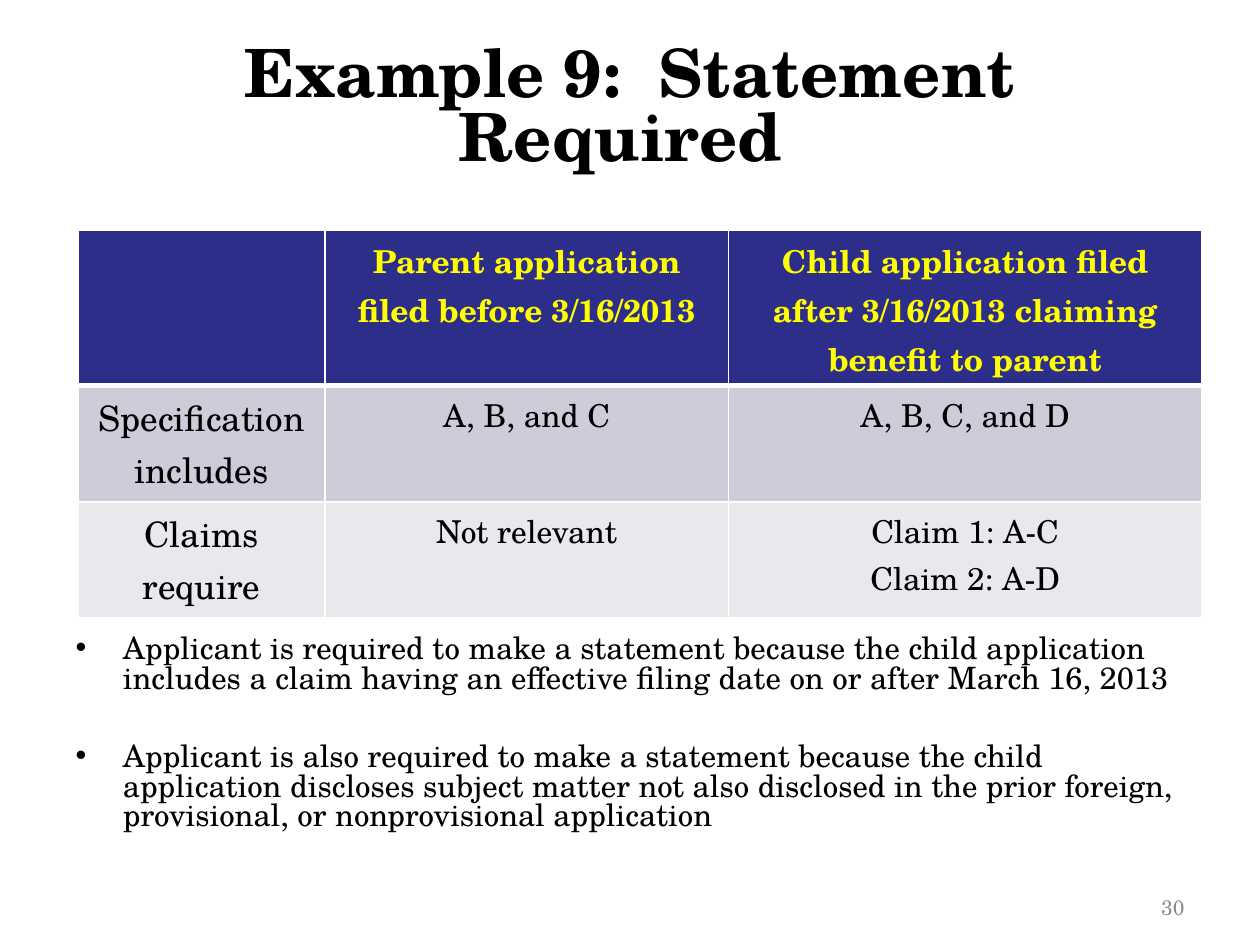
from dataclasses import dataclass

from lxml.etree import SubElement
from pptx import Presentation
from pptx.dml.color import RGBColor as RGB
from pptx.enum.text import MSO_ANCHOR as Anchor, MSO_AUTO_SIZE as AutoSize, PP_ALIGN as Align
from pptx.oxml.ns import qn
from pptx.util import Inches, Pt

W, H = 10, 7.5
FONT = "TeX Gyre Schola"
COLORS = {"ink": "000000", "head": "2D2D8A", "head_text": "FFFF00", "band": "CDCDDA",
          "light": "E8E8ED", "rule": "FFFFFF", "number": "8C8C8C"}


@dataclass
class Box:
    """Place and size as shares of the slide."""
    x: float
    y: float
    w: float
    h: float

    def emu(self) -> tuple:
        return Inches(self.x * W), Inches(self.y * H), Inches(self.w * W), Inches(self.h * H)


@dataclass
class Row:
    height: float  # share of the slide height
    fill: str
    color: str
    sizes: tuple
    cells: tuple
    bold: bool = False
    rule: float = 1  # width of the line below


TITLE = Box(0.05, 0.033, 0.9, 0.167)
BODY = Box(0.05, 0.233, 0.9, 0.66)
NUMBER = Box(0.717, 0.911, 0.233, 0.069)
TABLE_AT = (0.062, 0.244)
COLUMNS = (0.196, 0.32, 0.376)
BULLETS_DROP = 0.44  # the list starts below the table

ROWS = (
    Row(0.164, "head", "head_text", (18, 18, 18),
        ("", "Parent application filed before 3/16/2013",
         "Child application filed after 3/16/2013 claiming benefit to parent"), True, 3),
    Row(0.123, "band", "ink", (20, 18, 18),
        ("Specification includes", "A, B, and C", "A, B, C, and D")),
    Row(0.123, "light", "ink", (20, 18, 18),
        ("Claims require", "Not relevant", "Claim 1: A-C\nClaim 2: A-D")),
)
BULLETS = (
    "Applicant is required to make a statement because the child application includes "
    "a claim having an effective filing date on or after March 16, 2013",
    "Applicant is also required to make a statement because the child application "
    "discloses subject matter not also disclosed in the prior foreign, provisional, "
    "or nonprovisional application",
)


def apply(target, values: dict) -> None:
    for name, value in values.items():
        setattr(target, name, value)


def place(sp, box: Box) -> None:
    apply(sp, dict(zip(("left", "top", "width", "height"), box.emu())))


def write(tf, text: str, size: float, color: str = "ink", bold: bool = False, **para) -> None:
    """Fill a text frame, one paragraph a line."""
    tf.text = text
    for p in tf.paragraphs:
        apply(p, para)
        for r in p.runs:
            apply(r.font, {"name": FONT, "size": Pt(size), "bold": bold})
            r.font.color.rgb = RGB.from_string(COLORS[color])


def add_borders(cell, widths: dict) -> None:
    tc_pr = cell._tc.get_or_add_tcPr()
    for side, width in widths.items():
        ln = SubElement(tc_pr, qn(f"a:ln{side}"), w=str(Pt(width)))
        SubElement(SubElement(ln, qn("a:solidFill")), qn("a:srgbClr"), val=COLORS["rule"])


def add_table(s) -> None:
    box = Box(*TABLE_AT, sum(COLUMNS), sum(row.height for row in ROWS))
    table = s.shapes.add_table(len(ROWS), len(COLUMNS), *box.emu()).table
    apply(table, {"first_row": False, "horz_banding": False})
    for column, share in zip(table.columns, COLUMNS):
        column.width = Inches(share * W)
    rule_above = 1
    for i, row in enumerate(ROWS):
        table.rows[i].height = Inches(row.height * H)
        for j, (text, size) in enumerate(zip(row.cells, row.sizes)):
            cell = table.cell(i, j)
            add_borders(cell, {"L": 1, "R": 1, "T": rule_above, "B": row.rule})
            cell.fill.solid()
            cell.fill.fore_color.rgb = RGB.from_string(COLORS[row.fill])
            write(cell.text_frame, text, size, row.color, row.bold, alignment=Align.CENTER)
        rule_above = row.rule


def main() -> None:
    prs = Presentation()
    apply(prs, {"slide_width": Inches(W), "slide_height": Inches(H)})
    s = prs.slides.add_slide(prs.slide_layouts[1])

    # Title
    title = s.shapes.title
    place(title, TITLE)
    apply(title.text_frame, {"auto_size": AutoSize.NONE, "vertical_anchor": Anchor.MIDDLE})
    write(title.text_frame, "Example 9:  Statement Required ", 38, bold=True,
          alignment=Align.CENTER, line_spacing=0.8)

    # Bullets below the table
    body = s.placeholders[1]
    place(body, BODY)
    tf = body.text_frame
    apply(tf, {"auto_size": AutoSize.NONE, "margin_top": Inches(BULLETS_DROP * H)})
    write(tf, "\n".join(BULLETS), 17.6, line_spacing=0.8, space_before=Pt(28))
    tf.paragraphs[0].space_before = Pt(0)

    # Slide number
    tf = s.shapes.add_textbox(*NUMBER.emu()).text_frame
    apply(tf, {"word_wrap": True, "vertical_anchor": Anchor.BOTTOM})
    write(tf, "30", 12, "number", alignment=Align.RIGHT)

    # Table
    add_table(s)
    prs.save("out.pptx")


if __name__ == "__main__":
    main()
